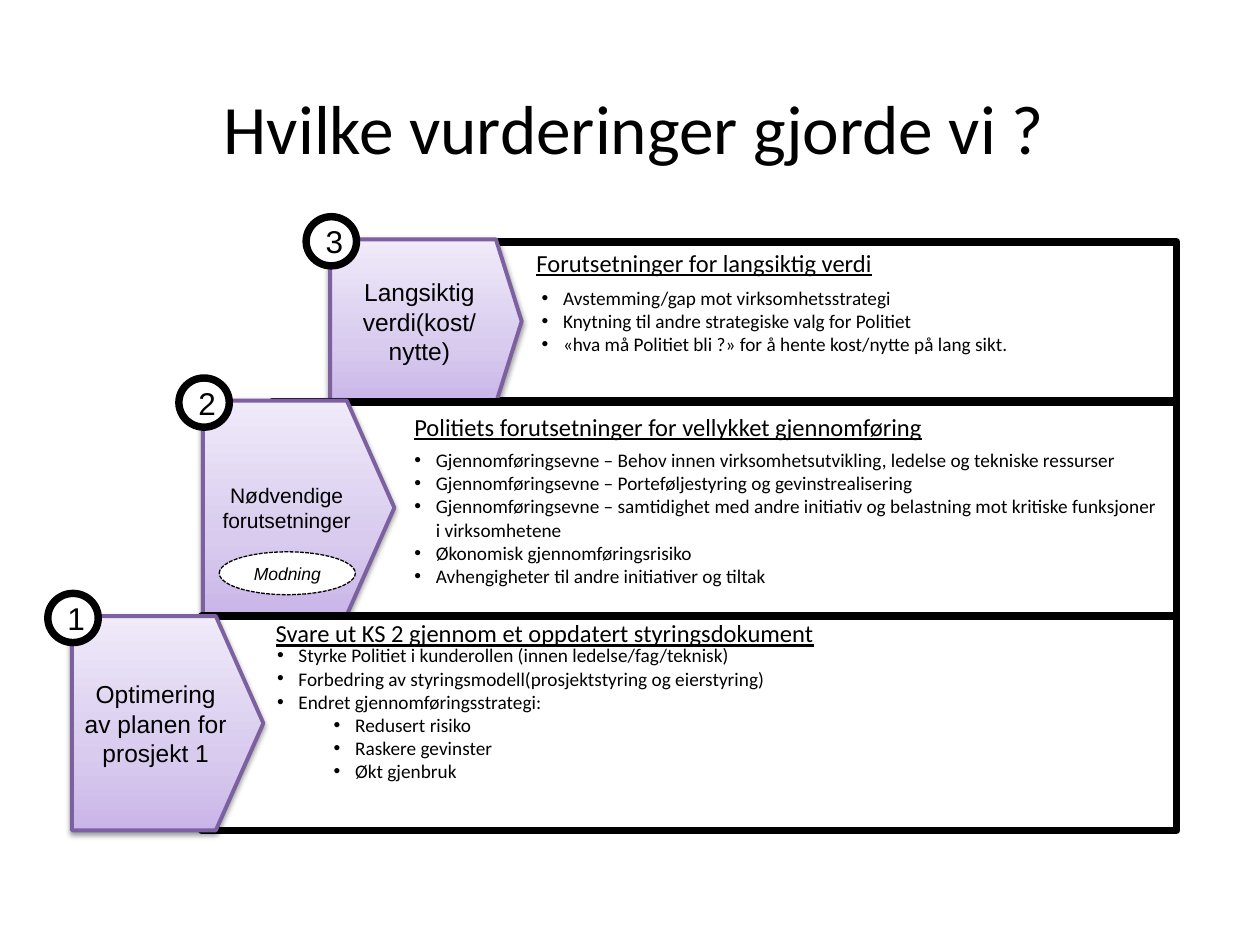
from lxml import etree
from pptx import Presentation
from pptx.dml.color import RGBColor
from pptx.enum.dml import MSO_LINE
from pptx.enum.shapes import MSO_SHAPE as Shape
from pptx.enum.text import MSO_ANCHOR as Anchor, PP_ALIGN as Align
from pptx.oxml.ns import qn
from pptx.util import Inches, Pt

BLACK = RGBColor(0x00, 0x00, 0x00)
WHITE = RGBColor(0xFF, 0xFF, 0xFF)
PURPLE = RGBColor(0x7D, 0x60, 0xA0)
LILAC_STOPS = [(0, RGBColor(0xC9, 0xB5, 0xE8)),
               (35, RGBColor(0xD8, 0xCB, 0xEE)),
               (100, RGBColor(0xF0, 0xEA, 0xF9))]

FRAME_RIGHT = 9.34
ARROW_WIDTH = 1.52
BADGE = (0.4, 0.39)
HANG = 0.17       # hanging indent of the bullets
SUB_INDENT = 0.62

# Each step, from the top: arrow and frame boxes, then the text.
# Bullets are (level, text).
STEPS = [
    dict(number="3", left=2.62, top=1.9, height=1.3, point=0.157,
         frame=(3.56, 1.92, 1.26), label="Langsiktig verdi(kost/ nytte)",
         label_size=14, heading="Forutsetninger for langsiktig verdi",
         heading_at=(4.16, 1.92), list_box=(4.2, 2.22, 4.72, 0.66),
         bullets=[(0, "Avstemming/gap mot virksomhetsstrategi"),
                  (0, "Knytning til andre strategiske valg for Politiet"),
                  (0, "«hva må Politiet bli ?» for å hente kost/nytte på lang sikt.")]),
    dict(number="2", left=1.61, top=3.18, height=1.7, point=0.248,
         frame=(2.16, 3.19, 1.7), label="Nødvendige forutsetninger",
         label_size=12, heading="Politiets forutsetninger for vellykket gjennomføring",
         heading_at=(3.19, 3.22), list_box=(3.19, 3.51, 6.15, 1.21),
         note="Modning", note_box=(1.74, 4.38, 1.08, 0.34),
         bullets=[(0, "Gjennomføringsevne – Behov innen virksomhetsutvikling, ledelse og tekniske ressurser"),
                  (0, "Gjennomføringsevne – Porteføljestyring og gevinstrealisering"),
                  (0, "Gjennomføringsevne – samtidighet med andre initiativ og belastning mot kritiske funksjoner i virksomhetene"),
                  (0, "Økonomisk gjennomføringsrisiko"),
                  (0, "Avhengigheter til andre initiativer og tiltak")]),
    dict(number="1", left=0.57, top=4.89, height=1.7, point=0.248,
         frame=(1.6, 4.89, 1.7), label="Optimering av planen for prosjekt 1",
         label_size=14, heading="Svare ut KS 2 gjennom et oppdatert styringsdokument",
         heading_at=(2.09, 4.86), list_box=(2.1, 5.06, 5.99, 1.4),
         bullets=[(0, "Styrke Politiet i kunderollen (innen ledelse/fag/teknisk)"),
                  (0, "Forbedring av styringsmodell(prosjektstyring og eierstyring)"),
                  (0, "Endret gjennomføringsstrategi:"),
                  (1, "Redusert risiko"),
                  (1, "Raskere gevinster"),
                  (1, "Økt gjenbruk")]),
]


def write(shape, lines, size, font="Calibri", align=Align.LEFT, anchor=Anchor.TOP,
          underline=None, italic=None, bullets=False, insets=(0.1, 0.05, 0.1, 0.05)):
    """Fill a shape with (level, text) lines, or with one plain string."""
    frame = shape.text_frame
    frame.word_wrap = True
    frame.vertical_anchor = anchor
    (frame.margin_left, frame.margin_top,
     frame.margin_right, frame.margin_bottom) = map(Inches, insets)
    if isinstance(lines, str):
        lines = [(0, lines)]
    for index, (level, text) in enumerate(lines):
        para = frame.paragraphs[0] if index == 0 else frame.add_paragraph()
        para.alignment = align
        para.level = level
        run = para.add_run()
        run.text = text
        run.font.size = Pt(size)
        run.font.name = font
        run.font.color.rgb = BLACK
        run.font.underline = underline
        run.font.italic = italic
        if bullets:
            add_bullet(para, SUB_INDENT if level else HANG)


def add_bullet(para, indent):
    props = para._p.get_or_add_pPr()
    props.set("marL", str(Inches(indent)))
    props.set("indent", str(Inches(-HANG)))
    etree.SubElement(props, qn("a:buFont"), typeface="Arial")
    etree.SubElement(props, qn("a:buChar"), char="•")


def add_text(slide, box, lines, size, **text_format):
    write(slide.shapes.add_textbox(*map(Inches, box)), lines, size, **text_format)


def add_outlined(slide, kind, box, line_color=BLACK, line_width=4.25):
    shape = slide.shapes.add_shape(kind, *map(Inches, box))
    shape.shadow.inherit = False
    shape.fill.solid()
    shape.fill.fore_color.rgb = WHITE
    shape.line.color.rgb = line_color
    shape.line.width = Pt(line_width)
    return shape


def shade(shape):
    """Give a shape the lilac gradient and a soft shadow below."""
    shape.fill.gradient()
    shape.fill.gradient_angle = 90
    props = shape._element.spPr
    stops = props.find(qn("a:gradFill")).find(qn("a:gsLst"))
    for old in list(stops):
        stops.remove(old)
    for position, color in LILAC_STOPS:
        stop = etree.SubElement(stops, qn("a:gs"), pos=str(position * 1000))
        etree.SubElement(stop, qn("a:srgbClr"), val=str(color))
    shadow = etree.SubElement(props.find(qn("a:effectLst")), qn("a:outerShdw"),
                              blurRad=str(Pt(3.1)), dist=str(Pt(1.6)),
                              dir="5400000", rotWithShape="0")
    shadow_color = etree.SubElement(shadow, qn("a:srgbClr"), val=str(BLACK))
    etree.SubElement(shadow_color, qn("a:alpha"), val="38000")


def add_step(slide, step):
    # Frame behind the text
    left, top, height = step["frame"]
    add_outlined(slide, Shape.RECTANGLE, (left, top, FRAME_RIGHT - left, height))

    # Arrow with the name of the step
    arrow_box = (step["left"], step["top"], ARROW_WIDTH, step["height"])
    arrow = add_outlined(slide, Shape.PENTAGON, arrow_box, PURPLE, 2.25)
    arrow.adjustments[0] = step["point"]
    shade(arrow)
    write(arrow, step["label"], step["label_size"], font="Arial", align=Align.CENTER,
          anchor=Anchor.MIDDLE, insets=(0.08, 0.05, 0.08, 0.05))

    # Heading and bullets
    add_text(slide, (*step["heading_at"], 6.83, 0.34), step["heading"], 14, underline=True)
    add_text(slide, step["list_box"], step["bullets"], 11, bullets=True)

    # Dashed note on the arrow
    if "note" in step:
        note = add_outlined(slide, Shape.OVAL, step["note_box"], line_width=0.75)
        note.line.dash_style = MSO_LINE.SQUARE_DOT
        write(note, step["note"], 10, font="Arial", align=Align.CENTER,
              anchor=Anchor.MIDDLE, italic=True, insets=(0, 0, 0, 0))

    # Number on the arrow's top left corner
    width, height = BADGE
    badge = add_outlined(slide, Shape.OVAL, (step["left"] - 0.19, step["top"] - 0.19 + 0.01,
                                             width, height))
    write(badge, step["number"], 18, font="Arial", align=Align.CENTER,
          anchor=Anchor.MIDDLE, insets=(0.05, 0, 0, 0))


def main():
    deck = Presentation()
    deck.slide_width, deck.slide_height = Inches(10), Inches(7.5)
    slide = deck.slides.add_slide(deck.slide_layouts[6])
    add_text(slide, (0.62, 0.76, 8.95, 0.5), "Hvilke vurderinger gjorde vi ? ", 39.6,
             align=Align.CENTER, anchor=Anchor.MIDDLE)
    for step in STEPS:
        add_step(slide, step)
    deck.save("out.pptx")


if __name__ == "__main__":
    main()
